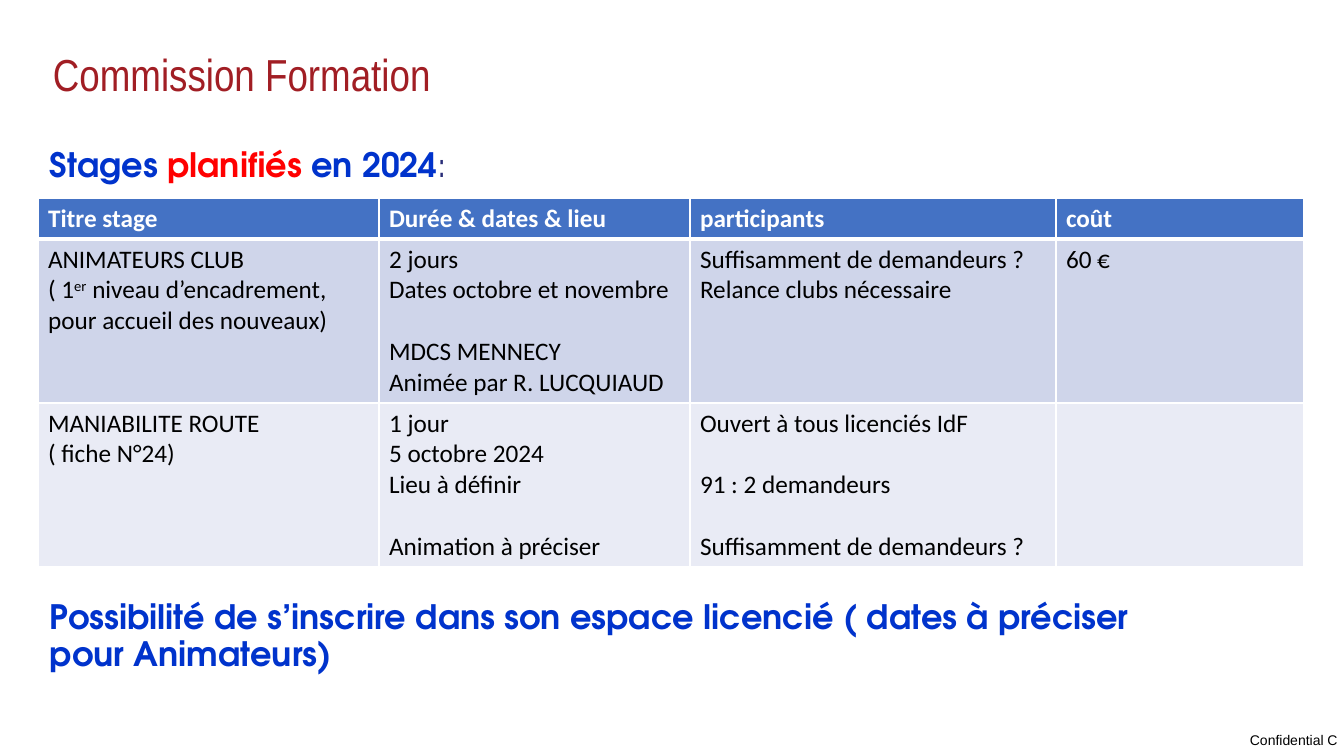
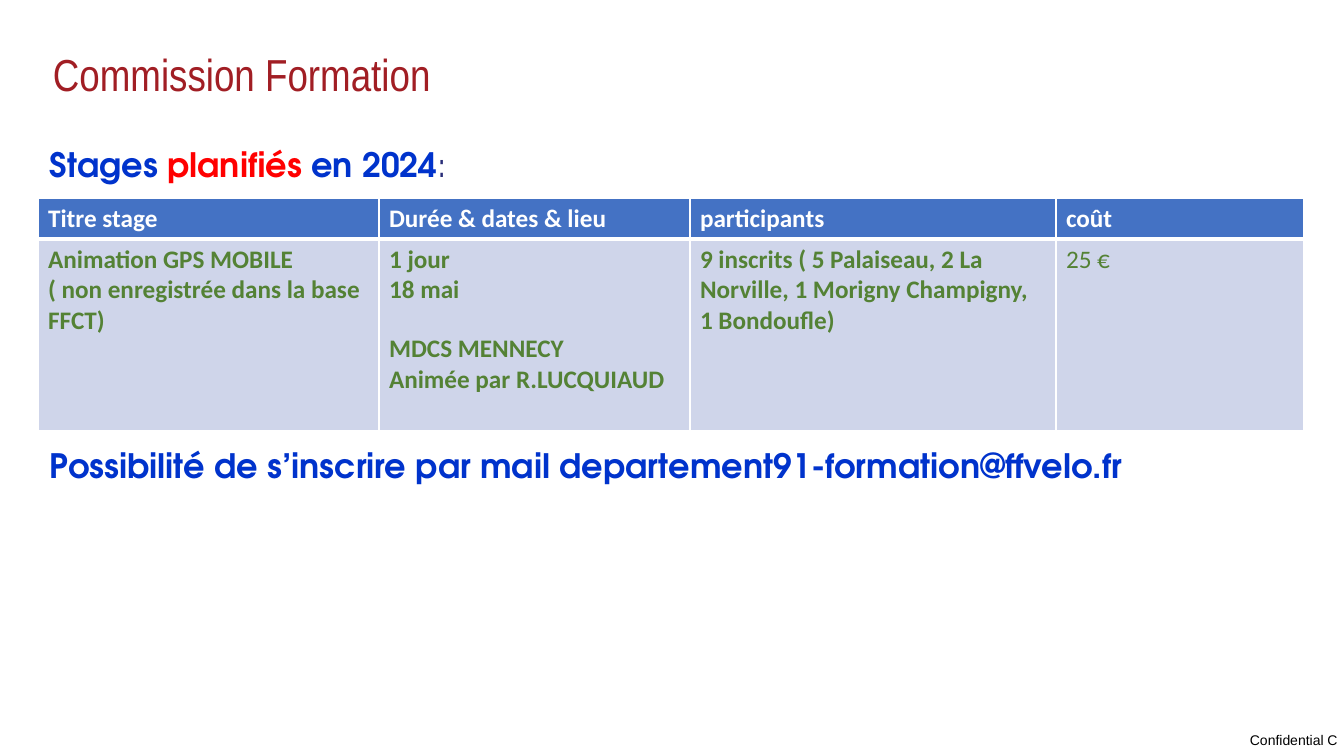
from lxml import etree
from pptx import Presentation
from pptx.dml.color import RGBColor
from pptx.enum.text import MSO_ANCHOR
from pptx.oxml.ns import qn
from pptx.util import Emu, Pt

MIDDLE = MSO_ANCHOR.MIDDLE
TOP = MSO_ANCHOR.TOP
PIXELS_PER_INCH = 100.8

WHITE = RGBColor(0xFF, 0xFF, 0xFF)
BLACK = RGBColor(0x00, 0x00, 0x00)
TITLE_RED = RGBColor(0xA1, 0x1E, 0x24)
ACCENT_RED = RGBColor(0xFF, 0x00, 0x00)
BLUE = RGBColor(0x00, 0x33, 0xCC)
NAVY = RGBColor(0x29, 0x2D, 0x78)
GREEN = RGBColor(0x54, 0x82, 0x35)
HEADER_FILL = RGBColor(0x44, 0x72, 0xC4)
BAND_FILLS = (RGBColor(0xCF, 0xD5, 0xEA), RGBColor(0xE9, 0xEB, 0xF5))

TITLE = {"font": "Arial Narrow", "size": 32, "color": TITLE_RED}
HEADING = {"font": "TeX Gyre Adventor", "size": 24, "color": BLUE, "bold": True}
FOOTER = {"font": "Arial", "size": 10, "color": BLACK}
TABLE_TEXT = {"font": "Calibri", "size": 18}

COLUMN_WIDTHS = (341, 311, 366, 248)
COLUMN_TITLES = ("Titre stage", "Durée & dates & lieu", "participants", "coût")
HEADER_HEIGHT = 41


def px(value):
    return Emu(round(value * 914400 / PIXELS_PER_INCH))


def write(paragraph, text, **text_format):
    runs = [(text, {})] if isinstance(text, str) else text
    for words, changes in runs:
        style = {**text_format, **changes}
        run = paragraph.add_run()
        run.text = words
        run.font.name = style["font"]
        run.font.size = Pt(style["size"])
        run.font.bold = style.get("bold", False)
        run.font.color.rgb = style["color"]
        if style.get("superscript"):
            run.font._element.set("baseline", "30000")


class Deck:
    """Holds the shared style and the slide being built."""

    def __init__(self):
        self.presentation = Presentation()
        self.presentation.slide_width = px(1344)
        self.presentation.slide_height = px(756)
        self.slide = None

    def add_slide(self):
        self.slide = self.presentation.slides.add_slide(self.presentation.slide_layouts[6])
        self.add_text("Confidential C", 1250, 732, 92, 17, FOOTER, wrap=False, inset=False, spacing=1.0)
        self.add_text("Commission Formation", 43, 39, 1085, 76, TITLE, anchor=MIDDLE)
        self.add_heading([
            ("Stages ", {}),
            ("planifiés ", {"color": ACCENT_RED}),
            ("en 2024", {}),
            (":", {"color": NAVY, "bold": False}),
        ], 144, 48)

    def add_text(self, text, left, top, width, height, style, anchor=TOP, wrap=True, inset=True, spacing=0.9):
        frame = self.slide.shapes.add_textbox(px(left), px(top), px(width), px(height)).text_frame
        frame.word_wrap = wrap
        frame.vertical_anchor = anchor
        if not inset:
            frame.margin_left = frame.margin_right = frame.margin_top = frame.margin_bottom = 0
        paragraph = frame.paragraphs[0]
        paragraph.line_spacing = spacing
        write(paragraph, text, **style)

    def add_heading(self, text, top, height):
        self.add_text(text, 40, top, 1128, height, HEADING)

    def add_borders(self, cell, top, bottom):
        properties = cell._tc.get_or_add_tcPr()
        for side, width in (("L", 1), ("R", 1), ("T", top), ("B", bottom)):
            line = etree.SubElement(properties, qn(f"a:ln{side}"), w=str(Pt(width)))
            fill = etree.SubElement(line, qn("a:solidFill"))
            etree.SubElement(fill, qn("a:srgbClr"), val=str(WHITE))

    def fill_cell(self, cell, blocks, style, gap):
        frame = cell.text_frame
        paragraph = None
        for block in blocks:
            for position, line in enumerate(block):
                is_first = paragraph is None
                paragraph = frame.paragraphs[0] if is_first else frame.add_paragraph()
                if position == 0 and not is_first:
                    paragraph.space_before = Pt(gap)
                write(paragraph, line, **style)

    def add_table(self, rows, row_height, color, bold=False, gap=22):
        heights = [HEADER_HEIGHT] + [row_height] * len(rows)
        table = self.slide.shapes.add_table(
            len(heights), len(COLUMN_WIDTHS), px(38), px(198), px(sum(COLUMN_WIDTHS)), px(sum(heights))
        ).table
        table.horz_banding = False
        for column, width in zip(table.columns, COLUMN_WIDTHS):
            column.width = px(width)
        header = [[[title]] for title in COLUMN_TITLES]
        for row_index, contents in enumerate([header, *rows]):
            table.rows[row_index].height = px(heights[row_index])
            is_header = row_index == 0
            style = {**TABLE_TEXT, "color": WHITE if is_header else color, "bold": is_header or bold}
            for column_index, blocks in enumerate(contents):
                cell = table.cell(row_index, column_index)
                self.add_borders(cell, 3 if row_index == 1 else 1, 3 if is_header else 1)
                cell.fill.solid()
                cell.fill.fore_color.rgb = HEADER_FILL if is_header else BAND_FILLS[(row_index - 1) % 2]
                self.fill_cell(cell, blocks, style, gap)


def build_planned_courses(deck):
    deck.add_slide()
    level = [
        ("( 1", {}),
        ("er", {"superscript": True}),
        (" niveau d’encadrement, pour accueil des nouveaux)", {}),
    ]
    deck.add_table([
        [
            [["ANIMATEURS CLUB", level]],
            [["2 jours", "Dates octobre et novembre"], ["MDCS MENNECY", "Animée par R. LUCQUIAUD"]],
            [["Suffisamment de demandeurs ?", "Relance clubs nécessaire"]],
            [["60 €"]],
        ],
        [
            [["MANIABILITE ROUTE", "( fiche N°24)"]],
            [["1 jour", "5 octobre 2024", "Lieu à définir"], ["Animation à préciser"]],
            [["Ouvert à tous licenciés IdF"], ["91 : 2 demandeurs"], ["Suffisamment de demandeurs ?"]],
            [],
        ],
    ], 164, BLACK)
    deck.add_heading(
        "Possibilité de s’inscrire dans son espace licencié ( dates à préciser pour Animateurs)", 596, 85
    )


def build_gps_course(deck):
    deck.add_slide()
    deck.add_table([
        [
            [["Animation GPS MOBILE", "( non enregistrée dans la base FFCT)"]],
            [["1 jour", "18 mai"], ["MDCS MENNECY", "Animée par R.LUCQUIAUD"]],
            [["9 inscrits ( 5 Palaiseau, 2 La Norville, 1 Morigny Champigny,", "1 Bondoufle)"]],
            [[[("25 €", {"bold": False})]]],
        ],
    ], 192, GREEN, bold=True, gap=20)
    deck.add_heading("Possibilité de s’inscrire par mail departement91-formation@ffvelo.fr", 445, 48)


def main():
    deck = Deck()
    build_planned_courses(deck)
    build_gps_course(deck)
    deck.presentation.save("out.pptx")


if __name__ == "__main__":
    main()
